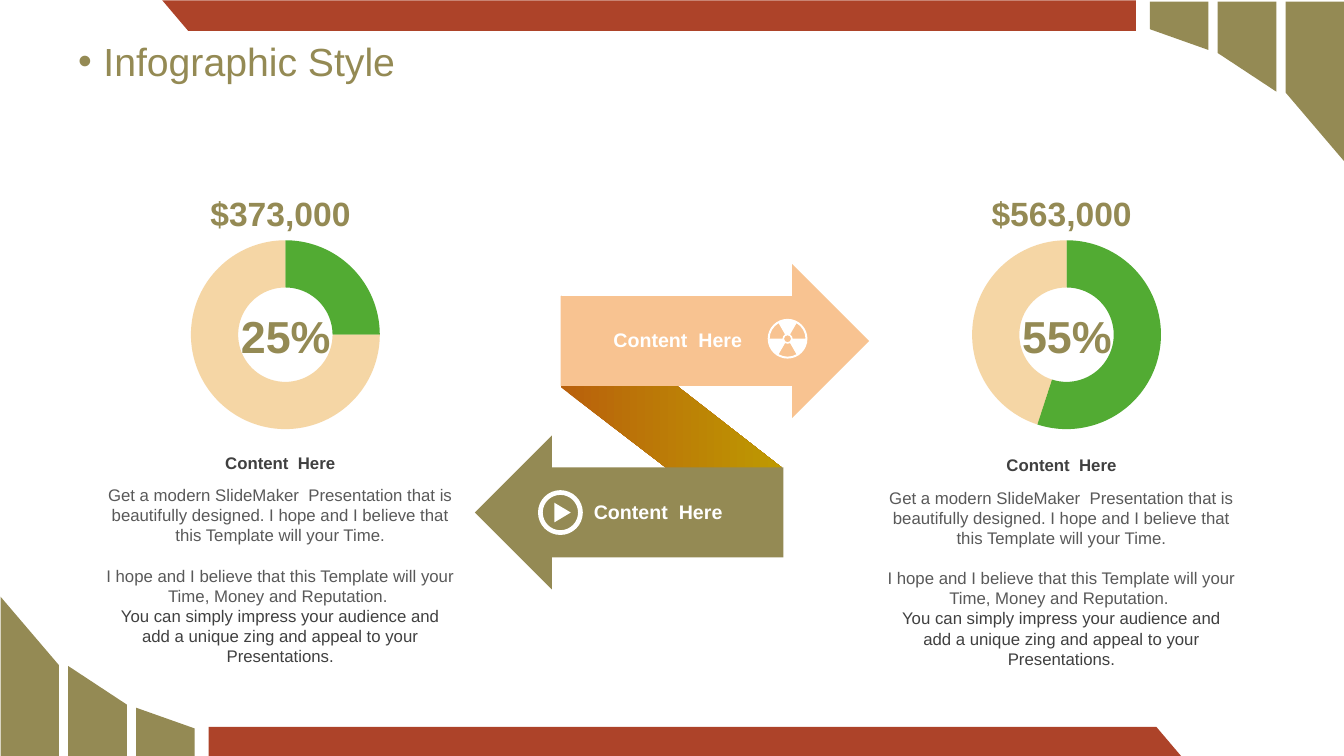
"""Build the infographic slide with two doughnut panels and a folded arrow."""
import math
from dataclasses import dataclass

import pptx
import pptx.chart.data
import pptx.dml.color
import pptx.enum.chart
import pptx.enum.shapes
import pptx.enum.text
import pptx.oxml
import pptx.oxml.ns
import pptx.util

Pt = pptx.util.Pt
RGB = pptx.dml.color.RGBColor
ALIGN = pptx.enum.text.PP_ALIGN
MID = pptx.enum.text.MSO_ANCHOR.MIDDLE
TOP = pptx.enum.text.MSO_ANCHOR.TOP
SPACE = pptx.oxml.ns.nsdecls("a")

RED = RGB(0xAD, 0x43, 0x29)
OLIVE = RGB(0x94, 0x8A, 0x54)
PEACH = RGB(0xF8, 0xC3, 0x91)
GREEN = RGB(0x52, 0xAB, 0x33)
SAND = RGB(0xEC, 0xAE, 0x4D)
RUST = RGB(0xB9, 0x60, 0x0C)
GOLD = RGB(0xBE, 0x9A, 0x01)
DARK = RGB(0x40, 0x40, 0x40)
GREY = RGB(0x59, 0x59, 0x59)
WHITE = RGB(0xFF, 0xFF, 0xFF)
BLACK = RGB(0, 0, 0)

Steps = list[tuple[float, ...]]
Box = tuple[float, float, float, float]


@dataclass
class Line:
    text: str
    size: float
    color: RGB
    bold: bool = True
    align: ALIGN = ALIGN.CENTER
    gap: float = 0


@dataclass
class Panel:
    left: float
    drop: float
    share: int
    total: str


@dataclass
class Piece:
    dots: Steps
    color: RGB


@dataclass
class Arrow:
    left: float
    top: float
    turn: float
    color: RGB
    label: Box
    align: ALIGN


PIECES = [
    Piece([(149, 519.2), (826, 519.2), (844.5, 541), (149, 541)], RED),
    Piece([(97.2, 505.5), (139, 520.3), (139, 540), (97.2, 540)], OLIVE),
    Piece([(48.7, 475.7), (90.6, 503.3), (90.6, 540), (48.7, 540)], OLIVE),
    Piece([(0.4, 426.2), (42, 475), (42, 540), (0.4, 540)], OLIVE),
]
ARROWS = [
    Arrow(400.5, 188.6, 0, PEACH, (413.3, 230.6, 124, 24.5), ALIGN.RIGHT),
    Arrow(339.2, 311, 180, OLIVE, (424.2, 353.5, 124, 24.5), ALIGN.LEFT),
]
PANELS = [Panel(75.3, 0, 25, "$373,000"), Panel(633.3, 1.8, 55, "$563,000")]
BODY = [
    Line("Get a modern SlideMaker  Presentation that is beautifully designed. "
         "I hope and I believe that this Template will your Time.", 12, GREY, False),
    Line("I hope and I believe that this Template will your Time, "
         "Money and Reputation. ", 12, GREY, False, gap=14.4),
    Line("You can simply impress your audience and add a unique zing and "
         "appeal to your Presentations.", 12, DARK, False),
]


def draw(shapes, rings: list[Steps]):
    """Draw closed outlines of lines (2 numbers) and curves (6) as one freeform."""
    pen = None
    for ring in rings:
        flat = [Pt(n) for step in ring for n in step]
        dots = list(zip(flat[::2], flat[1::2]))
        if pen is None:
            pen = shapes.build_freeform(*dots[0])
        else:
            pen.move_to(*dots[0])
        pen.add_line_segments(dots[1:])
    form = pen.convert_to_shape()
    nodes = iter(form.element.xpath(".//a:lnTo"))
    for step in (step for ring in rings for step in ring[1:]):
        group = [next(nodes) for _ in range(len(step) // 2)]
        if len(group) == 3:
            curve = pptx.oxml.parse_xml(f"<a:cubicBezTo {SPACE}/>")
            group[0].addprevious(curve)
            for node in group:
                curve.append(node[0])
                node.getparent().remove(node)
    form.shadow.inherit = False
    form.line.fill.background()
    return form


def paint(form, color: RGB) -> None:
    """Fill a shape with one colour."""
    form.fill.solid()
    form.fill.fore_color.rgb = color


def arc(x: float, y: float, r: float, start: float = 0, sweep: float = 360) -> Steps:
    """Return a start point and the curves of an arc, clockwise in degrees."""
    count = math.ceil(abs(sweep) / 90)
    part = math.radians(sweep / count)
    pull = 4 / 3 * math.tan(part / 4)
    turn = math.radians(start)
    steps: Steps = [(x + r * math.cos(turn), y + r * math.sin(turn))]
    for i in range(count):
        a = turn + i * part
        b = a + part
        steps.append((x + r * (math.cos(a) - pull * math.sin(a)),
                      y + r * (math.sin(a) + pull * math.cos(a)),
                      x + r * (math.cos(b) + pull * math.sin(b)),
                      y + r * (math.sin(b) - pull * math.cos(b)),
                      x + r * math.cos(b), y + r * math.sin(b)))
    return steps


def write(shapes, box: Box, lines: list[Line], anchor=MID, inset: Box = (0, 3.6, 7.2, 3.6)):
    """Add a wrapped text box with one paragraph per line."""
    frame = shapes.add_textbox(*map(Pt, box)).text_frame
    frame.word_wrap = True
    frame.vertical_anchor = anchor
    (frame.margin_left, frame.margin_top,
     frame.margin_right, frame.margin_bottom) = map(Pt, inset)
    for i, line in enumerate(lines):
        para = frame.add_paragraph() if i else frame.paragraphs[0]
        para.text = line.text
        para.alignment = line.align
        if line.gap:
            para.space_before = Pt(line.gap)
        font = para.font
        font.name, font.size, font.bold = "Arial", Pt(line.size), line.bold
        font.color.rgb = line.color
    return frame


def plot(shapes, box: Box, share: int) -> None:
    """Add a doughnut chart showing one share of a hundred."""
    data = pptx.chart.data.CategoryChartData()
    data.categories = ["1", "2"]
    data.add_series("Series 1", (share, 100 - share))
    kind = pptx.enum.chart.XL_CHART_TYPE.DOUGHNUT
    chart = shapes.add_chart(kind, *map(Pt, box), data).chart
    chart.has_title = chart.has_legend = False
    chart.font.name, chart.font.size = "Arial", Pt(18)
    chart.font.color.rgb = BLACK
    chart.plots[0].vary_by_categories = True
    for i, color in enumerate((GREEN, SAND)):
        paint(chart.plots[0].series[0].points[i].format, color)
    pale = chart.element.xpath(".//c:dPt//a:srgbClr")[1]
    pale.append(pptx.oxml.parse_xml(f'<a:alpha {SPACE} val="50000"/>'))
    chart.element.xpath(".//c:holeSize")[0].set("val", "80")


def main() -> None:
    """Draw the slide and save it."""
    deck = pptx.Presentation()
    deck.slide_width, deck.slide_height = Pt(960), Pt(540)
    shapes = deck.slides.add_slide(deck.slide_layouts[6]).shapes
    for piece in PIECES:
        paint(draw(shapes, [piece.dots]), piece.color)
        paint(draw(shapes, [[(960.4 - x, 541.2 - y) for x, y in piece.dots]]), piece.color)

    head = write(shapes, (48.8, 26.6, 911, 57),
                 [Line("Infographic Style", 28, OLIVE, False, ALIGN.LEFT)],
                 TOP, (7.2, 3.6, 7.2, 3.6)).paragraphs[0]
    head.line_spacing = 0.9
    props = head._p.get_or_add_pPr()
    props.set("marL", str(Pt(18)))
    props.set("indent", str(-Pt(18)))
    for mark in ('buFont {} typeface="Arial"', 'buChar {} char="•"'):
        props.insert_element_before(
            pptx.oxml.parse_xml(f"<a:{mark.format(SPACE)}/>"), "a:tabLst", "a:defRPr")

    fold = draw(shapes, [[(400.5, 211), (559.5, 334.8), (559.5, 398), (400.5, 276.5)]])
    fold.fill.gradient()
    fold.fill.gradient_angle = 0
    for stop, color in zip(fold.fill.gradient_stops, (RUST, GOLD)):
        stop.color.rgb = color

    for arrow in ARROWS:
        form = shapes.add_shape(pptx.enum.shapes.MSO_SHAPE.RIGHT_ARROW,
                                *map(Pt, (arrow.left, arrow.top, 220.3, 110)))
        form.adjustments[0], form.adjustments[1] = 0.584, 0.5
        form.rotation = arrow.turn
        form.shadow.inherit = False
        form.line.fill.background()
        paint(form, arrow.color)
        write(shapes, arrow.label, [Line("Content  Here", 14, WHITE, align=arrow.align)])

    for panel in PANELS:
        x, y = panel.left, panel.drop
        write(shapes, (x, 319.7 + y, 257, 21.6), [Line("Content  Here", 12, DARK)])
        write(shapes, (x, 342.7 + y, 257, 124), BODY, TOP)
        write(shapes, (x + 31.7, 134, 193.7, 36), [Line(panel.total, 24, OLIVE)])
        plot(shapes, (x + 49.7, 161.7, 157.7, 154.8), panel.share)
        write(shapes, (x + 83.8, 216.7, 90, 46), [Line(f"{panel.share}%", 32, OLIVE)],
              inset=(7.2, 3.6, 7.2, 3.6))

    x, y = 562.6, 242
    blades = []
    for turn in (60, 180, 300):
        back = arc(x, y, 3.6, turn + 60, -60)
        blades.append(arc(x, y, 12.8, turn, 60) + back)
    paint(draw(shapes, [arc(x, y, 14.2), *blades, arc(x, y, 2.5)]), WHITE)
    x, y = 400.3, 366.1
    wedge = [(x - 4.3, y - 7), (x + 7.4, y), (x - 4.3, y + 7)]
    paint(draw(shapes, [arc(x, y, 16), arc(x, y, 12.6), wedge]), WHITE)
    deck.save("out.pptx")


if __name__ == "__main__":
    main()
